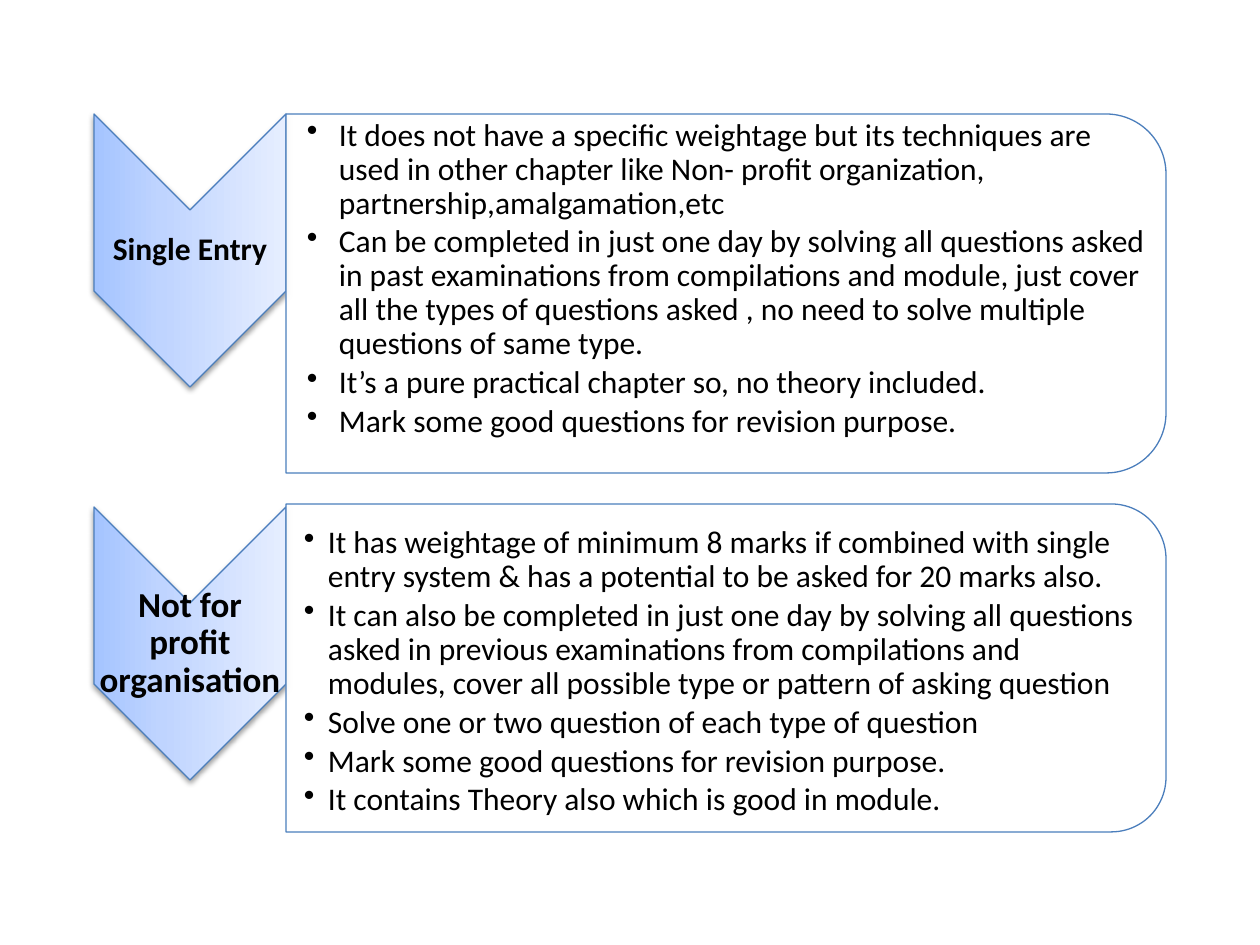
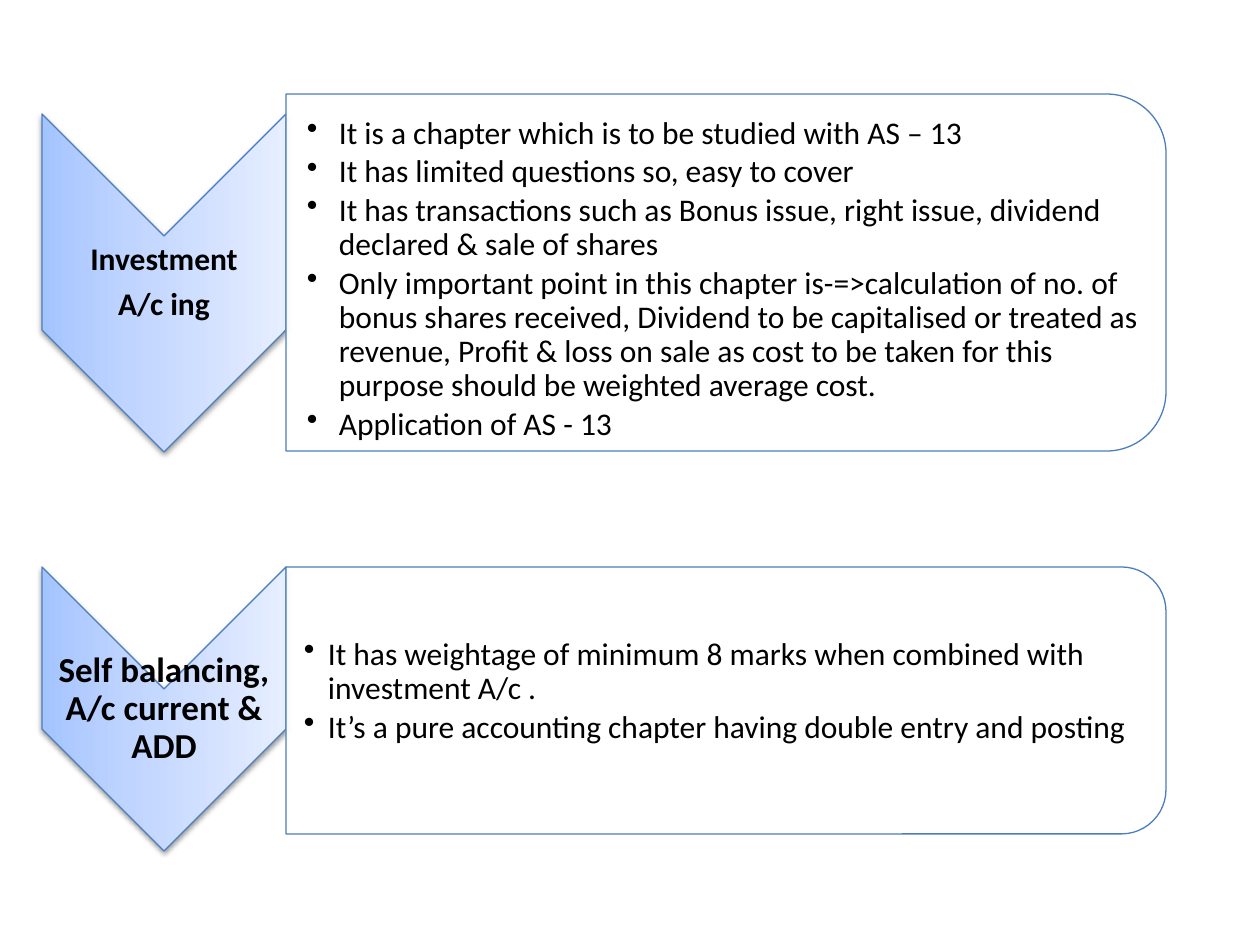
"""Build two slides of chapter notes, each with two chevron labels and panels."""
from copy import deepcopy
from dataclasses import dataclass

from lxml.etree import SubElement
from pptx import Presentation
from pptx.dml.color import RGBColor
from pptx.enum.shapes import MSO_SHAPE
from pptx.enum.text import MSO_ANCHOR, PP_ALIGN
from pptx.oxml.ns import qn
from pptx.util import Emu, Pt


@dataclass(frozen=True)
class Theme:
    font: str = "Calibri"
    ink: str = "000000"
    paper: str = "FFFFFF"
    edge: str = "4B7EBC"
    fade: tuple = ((0, "A4C4FF"), (0.35, "BFD4FF"), (1, "E6EEFF"))
    body: int = 18
    thin: float = 0.75


theme = Theme()


def px(count):
    return Emu(round(count * 914400 / 126))


def add_turned(slide, kind, left, top, width, height):
    x = left + (width - height) / 2
    y = top + (height - width) / 2
    shape = slide.shapes.add_shape(kind, px(x), px(y), px(height), px(width))
    shape.rotation = 90
    shape.shadow.inherit = False
    shape.line.color.rgb = RGBColor.from_string(theme.edge)
    shape.line.width = Pt(theme.thin)
    return shape


SPLIT = 286
WIDE = 880

slides = [
    (192, [
        ((114, 273), (114, 359), (136, 286), ["Single Entry"], [
            "It does not have a specific weightage but its techniques are used in other chapter "
            "like Non- profit organization, partnership,amalgamation,etc",
            "Can be completed in just one day by solving all questions asked in past examinations "
            "from compilations and module, just cover all the types of questions asked , "
            "no need to solve multiple questions of same type.",
            "It’s a pure practical chapter so, no theory included.",
            "Mark some good questions for revision purpose.",
        ]),
        ((507, 273), (504, 328), (504, 336), ["Not for profit organisation"], [
            "It has weightage of minimum 8 marks if combined with single entry system "
            "& has a potential to be asked for 20 marks also.",
            "It can also be completed in just one day by solving all questions asked in previous "
            "examinations from compilations and modules, cover all possible type or pattern "
            "of asking question",
            "Solve one or two question of each type of question",
            "Mark some good questions for revision purpose.",
            "It contains Theory also which is good in module.",
        ]),
    ]),
    (244, [
        ((114, 338), (94, 357), (136, 287), ["Investment", "A/c ing"], [
            "It is a chapter which is to be studied with AS – 13",
            "It has limited questions so, easy to cover",
            "It has transactions such as Bonus issue, right issue, dividend declared "
            "& sale of shares",
            "Only important point in this chapter is-=>calculation of no. of bonus shares "
            "received, Dividend to be capitalised or treated as revenue, Profit & loss on sale "
            "as cost to be taken for this purpose should be weighted average cost.",
            "Application of AS - 13",
        ]),
        ((567, 284), (567, 267), (622, 139), ["Self balancing, A/c current & ADD"], [
            "It has weightage of minimum 8 marks when combined with investment A/c .",
            "It’s a pure accounting chapter having double entry and posting",
        ]),
    ]),
]

styles = [
    {"label": 18, "indent": 32, "inset": 21, "pad": 3, "width": 871},
    {"label": 20, "indent": 24, "inset": 18, "pad": 1, "width": 857},
]

deck = Presentation()
deck.slide_width = px(1260)
deck.slide_height = px(945)

for span, rows in slides:
    slide = deck.slides.add_slide(deck.slide_layouts[6])
    for style, (arrow, panel, area, label, notes) in zip(styles, rows):
        top, height = arrow
        left = SPLIT - span
        chevron = add_turned(slide, MSO_SHAPE.CHEVRON, left, top, span, height)
        chevron.fill.gradient()
        chevron.fill.gradient_angle = 90
        props = chevron._element.spPr
        stops = props.find(".//" + qn("a:gsLst"))
        stops.insert(1, deepcopy(stops[0]))
        for stop, (place, tint) in zip(chevron.fill.gradient_stops, theme.fade):
            stop.position = place
            stop.color.rgb = RGBColor.from_string(tint)
        glow = SubElement(props.find(qn("a:effectLst")), qn("a:outerShdw"),
                          blurRad=str(Pt(3.1)), dist=str(Pt(1.6)), dir="5400000",
                          rotWithShape="0")
        shade = SubElement(glow, qn("a:srgbClr"), val=theme.ink)
        SubElement(shade, qn("a:alpha"), val="38000")

        frame = add_turned(slide, MSO_SHAPE.ROUND_2_SAME_RECTANGLE, SPLIT, panel[0], WIDE, panel[1])
        frame.fill.solid()
        frame.fill.fore_color.rgb = RGBColor.from_string(theme.paper)
        color = frame._element.spPr.find(qn("a:solidFill"))[0]
        SubElement(color, qn("a:alpha"), val="90000")

        texts = [
            (label, (left, top + span / 2, span, height - span), 1, 1, style["label"], False),
            (notes, (SPLIT, area[0], style["width"], area[1]),
             style["inset"], style["pad"], theme.body, True),
        ]
        for lines, place, inset, pad, size, listed in texts:
            box = slide.shapes.add_textbox(*map(px, place)).text_frame
            box.word_wrap = True
            box.vertical_anchor = MSO_ANCHOR.MIDDLE
            box.margin_left = px(inset)
            box.margin_top = box.margin_right = box.margin_bottom = px(pad)
            box.text = "\n".join(lines)
            for para in box.paragraphs:
                para.line_spacing = 0.9
                para.space_after = Pt(size * (0.15 if listed else 0.35))
                if listed:
                    para.level = 1
                    marks = para._p.get_or_add_pPr()
                    marks.set("marL", str(px(style["indent"])))
                    marks.set("indent", str(-px(style["indent"])))
                    SubElement(marks, qn("a:buChar"), char="•")
                else:
                    para.alignment = PP_ALIGN.CENTER
                for run in para.runs:
                    run.font.name = theme.font
                    run.font.size = Pt(size)
                    run.font.bold = not listed
                    run.font.color.rgb = RGBColor.from_string(theme.ink)

deck.save("out.pptx")
